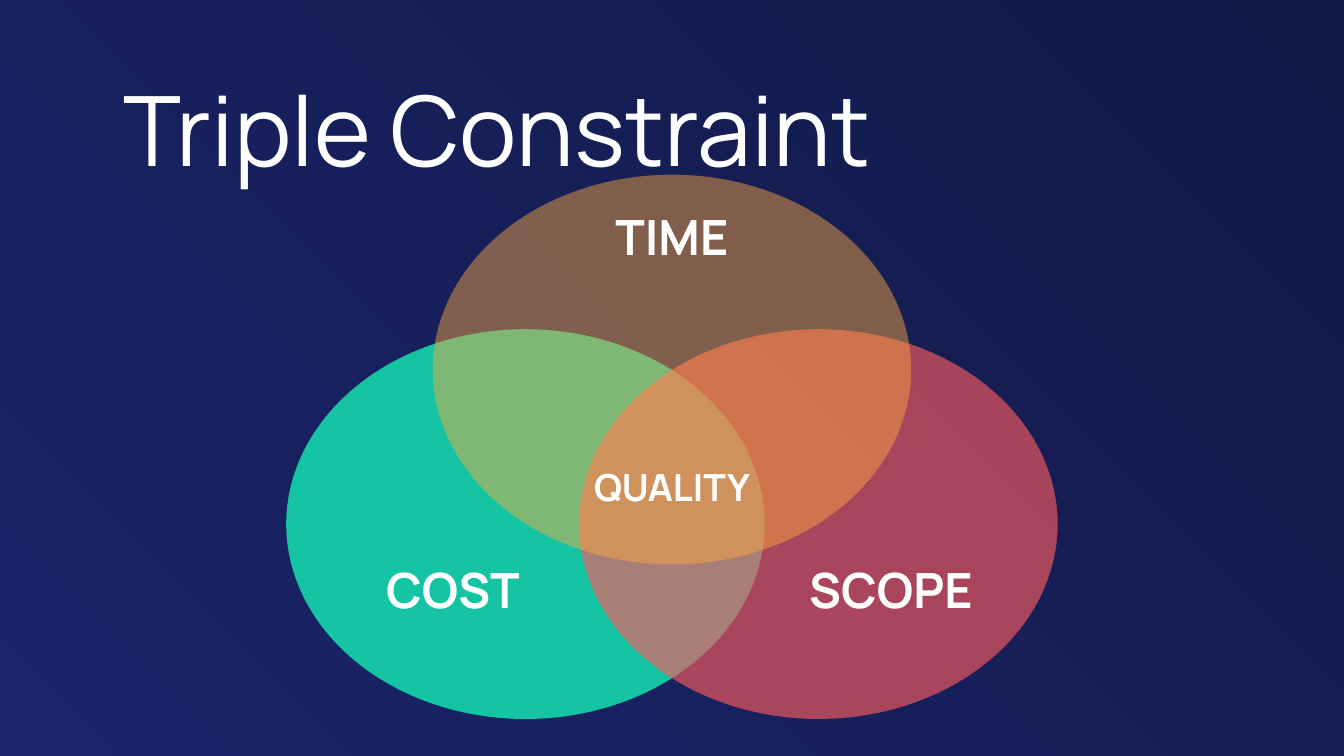
from dataclasses import dataclass

from lxml import etree
from pptx import Presentation
from pptx.dml.color import RGBColor
from pptx.enum.shapes import MSO_SHAPE
from pptx.enum.text import MSO_ANCHOR, PP_ALIGN
from pptx.oxml.ns import qn
from pptx.slide import Slide
from pptx.util import Inches, Pt

OVAL = MSO_SHAPE.OVAL
TOP = MSO_ANCHOR.TOP
LEFT, CENTER = PP_ALIGN.LEFT, PP_ALIGN.CENTER

NIGHT = RGBColor(0x12, 0x19, 0x47)
NAVY = RGBColor(0x1A, 0x25, 0x6A)
TEAL = RGBColor(0x14, 0xC4, 0xA3)
CORAL = RGBColor(0xF8, 0x5A, 0x5E)
AMBER = RGBColor(0xFF, 0xAB, 0x40)
WHITE = RGBColor(0xFF, 0xFF, 0xFF)

FONT = "Manrope"
WIDTH = 10
HEIGHT = WIDTH * 9 / 16
MIDDLE = WIDTH / 2
OVAL_WIDTH, OVAL_HEIGHT = 3.56, 2.9
LABEL_WIDTH, LABEL_HEIGHT = 1.89, 0.48
OVAL_SHIFT = 1.09  # lower ovals, left and right of the middle
LABEL_SHIFT = 1.63  # lower labels, left and right of the middle


@dataclass(frozen=True)
class Circle:
    center: float
    top: float
    color: RGBColor
    opacity: int = 100


@dataclass(frozen=True)
class Label:
    text: str
    center: float
    top: float
    size: int = 26


COST_CIRCLE = Circle(MIDDLE - OVAL_SHIFT, 2.45, TEAL)
SCOPE_CIRCLE = Circle(MIDDLE + OVAL_SHIFT, 2.45, CORAL, 65)
TIME_CIRCLE = Circle(MIDDLE, 1.3, AMBER, 46)
LABELS = (
    Label("TIME", MIDDLE, 1.53),
    Label("QUALITY", MIDDLE, 3.44, 20),
    Label("SCOPE", MIDDLE + LABEL_SHIFT, 4.16),
    Label("COST", MIDDLE - LABEL_SHIFT, 4.16),
)


def paint_background(page: Slide) -> None:
    fill = page.background.fill
    fill.gradient()
    fill.gradient_angle = 225
    for stop, color in zip(fill.gradient_stops, (NIGHT, NAVY)):
        stop.color.rgb = color


def add_circle(page: Slide, circle: Circle) -> None:
    oval = page.shapes.add_shape(
        OVAL, Inches(circle.center - OVAL_WIDTH / 2), Inches(circle.top),
        Inches(OVAL_WIDTH), Inches(OVAL_HEIGHT))
    oval.shadow.inherit = False
    oval.line.fill.background()
    oval.fill.solid()
    oval.fill.fore_color.rgb = circle.color
    if circle.opacity < 100:
        color = oval.element.spPr.find(qn("a:solidFill"))[0]
        etree.SubElement(color, qn("a:alpha"), val=str(circle.opacity * 1000))


def add_text(page: Slide, text: str, left: float, top: float, width: float,
             height: float, size: int, align: PP_ALIGN = LEFT,
             bold: bool = False, inset: float = 0) -> None:
    box = page.shapes.add_textbox(
        Inches(left), Inches(top), Inches(width), Inches(height))
    frame = box.text_frame
    frame.word_wrap = True
    frame.vertical_anchor = TOP
    frame.margin_left = frame.margin_right = frame.margin_bottom = 0
    frame.margin_top = Inches(inset)
    frame.text = text
    para = frame.paragraphs[0]
    para.alignment = align
    font = para.runs[0].font
    font.name, font.size, font.bold = FONT, Pt(size), bold
    font.color.rgb = WHITE


def main() -> None:
    deck = Presentation()
    deck.slide_width, deck.slide_height = Inches(WIDTH), Inches(HEIGHT)
    page = deck.slides.add_slide(deck.slide_layouts[6])
    paint_background(page)

    # Lower circles, title, then the upper circle
    add_circle(page, COST_CIRCLE)
    add_circle(page, SCOPE_CIRCLE)
    add_text(page, "Triple Constraint", 0.92, 0.52, 8.24, 0.84, 52)
    add_circle(page, TIME_CIRCLE)

    # Labels
    for label in LABELS:
        add_text(page, label.text, label.center - LABEL_WIDTH / 2, label.top,
                 LABEL_WIDTH, LABEL_HEIGHT, label.size, CENTER, True, 0.01)

    deck.save("out.pptx")


if __name__ == "__main__":
    main()
